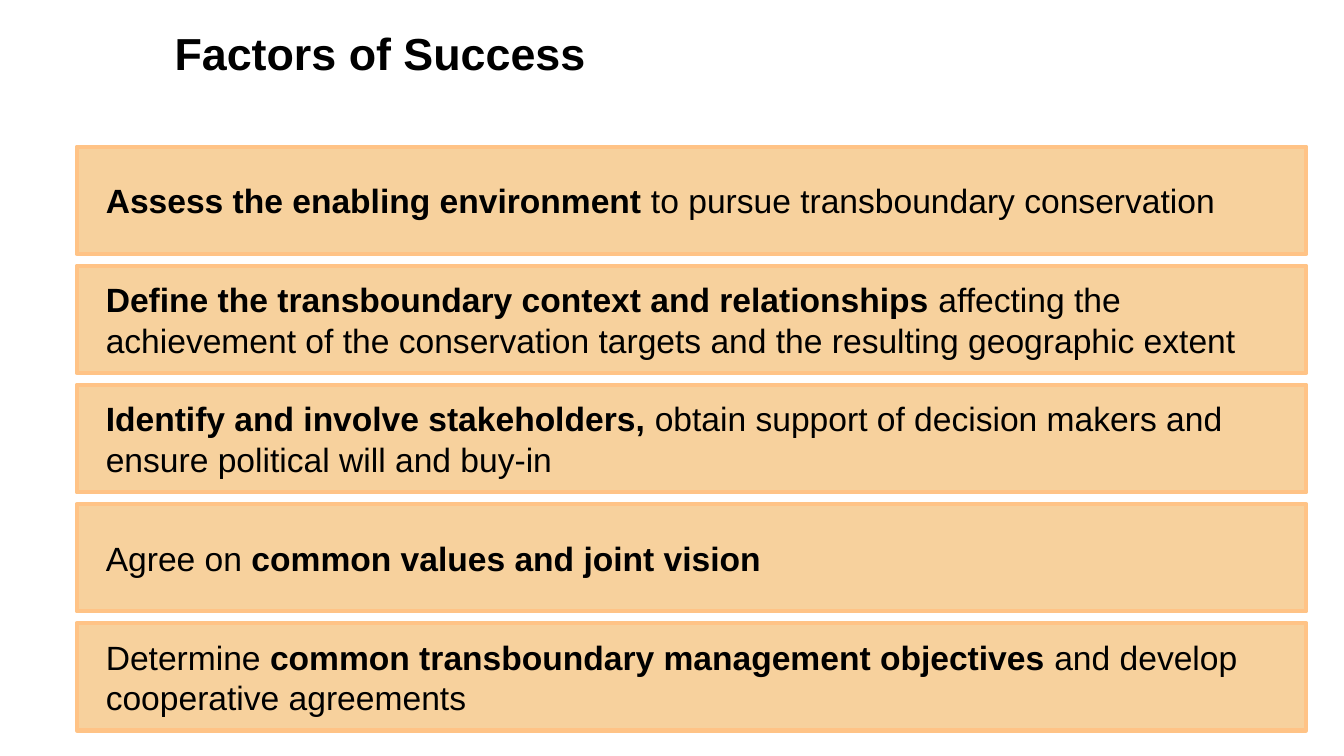
from typing import NamedTuple

from lxml.etree import SubElement
from pptx import Presentation
from pptx.dml.color import RGBColor
from pptx.enum.shapes import MSO_SHAPE
from pptx.enum.text import MSO_ANCHOR, PP_ALIGN
from pptx.oxml.ns import qn
from pptx.shapes.autoshape import Shape
from pptx.slide import Slide
from pptx.util import Cm, Pt

BLACK = RGBColor(0x00, 0x00, 0x00)
WHITE = RGBColor(0xFF, 0xFF, 0xFF)
SAND = RGBColor(0xF6, 0xC6, 0x85)
ORANGE = RGBColor(0xFF, 0xC3, 0x86)
FONT = "Arial"

BAR_LEFT, BAR_WIDTH, BAR_HEIGHT = Cm(1.45), Cm(23.24), Cm(2.03)
FIRST_BAR_TOP, BAR_PITCH = Cm(2.77), Cm(2.25)


class Factor(NamedTuple):
    """A success factor: plain lead-in, bold key phrase, plain ending."""
    lead: str
    key: str
    ending: str


FACTORS = [
    Factor("", "Assess the enabling environment ", "to pursue transboundary conservation"),
    Factor("", "Define the transboundary context and relationships ",
           "affecting the achievement of the conservation targets "
           "and the resulting geographic extent"),
    Factor("", "Identify and involve stakeholders, ",
           "obtain support of decision makers and ensure political will and buy-in"),
    Factor("Agree on ", "common values and joint vision", ""),
    Factor("Determine", " common transboundary management objectives ",
           "and develop cooperative agreements"),
]


def fill_translucent(shape: Shape, color: RGBColor, opacity: int) -> None:
    """Fill with a colour at the given opacity in percent."""
    shape.fill.solid()
    shape.fill.fore_color.rgb = color
    color_element = shape.fill._xPr.find(qn("a:solidFill"))[0]
    SubElement(color_element, qn("a:alpha"), val=str(opacity * 1000))


def add_title(slide: Slide, wording: str) -> None:
    title = slide.shapes.add_textbox(Cm(3.05), Cm(0.36), Cm(22.35), Cm(1.27))
    fill_translucent(title, WHITE, 55)
    title.text_frame.word_wrap = True
    heading = title.text_frame.paragraphs[0]
    heading.text = wording
    heading.font.name = FONT
    heading.font.size = Pt(24)
    heading.font.bold = True
    heading.font.color.rgb = BLACK


def add_factor(slide: Slide, factor: Factor, row: int) -> None:
    bar = slide.shapes.add_shape(MSO_SHAPE.RECTANGLE, BAR_LEFT,
                                 FIRST_BAR_TOP + row * BAR_PITCH, BAR_WIDTH, BAR_HEIGHT)
    bar.shadow.inherit = False
    fill_translucent(bar, SAND, 80)
    bar.line.color.rgb = ORANGE
    bar.line.width = Pt(2.25)

    frame = bar.text_frame
    frame.word_wrap = True
    frame.vertical_anchor = MSO_ANCHOR.MIDDLE
    frame.margin_left = frame.margin_right = Cm(0.25)
    frame.margin_top = frame.margin_bottom = Cm(0.25)

    statement = frame.paragraphs[0]
    statement.alignment = PP_ALIGN.LEFT
    statement.space_after = Pt(6)
    properties = statement._p.get_or_add_pPr()
    properties.set("marL", str(Cm(0.3)))
    properties.set("indent", "0")
    statement.font.name = FONT
    statement.font.size = Pt(18)
    statement.font.color.rgb = BLACK
    for wording, is_key in zip(factor, (False, True, False)):
        if wording:
            part = statement.add_run()
            part.text = wording
            part.font.bold = is_key


def main() -> None:
    presentation = Presentation()
    presentation.slide_width = Cm(25.4)
    presentation.slide_height = Cm(14.28)
    slide = presentation.slides.add_slide(presentation.slide_layouts[6])
    for row, factor in enumerate(FACTORS):
        add_factor(slide, factor, row)
    add_title(slide, "Factors of Success")
    presentation.save("out.pptx")


if __name__ == "__main__":
    main()
